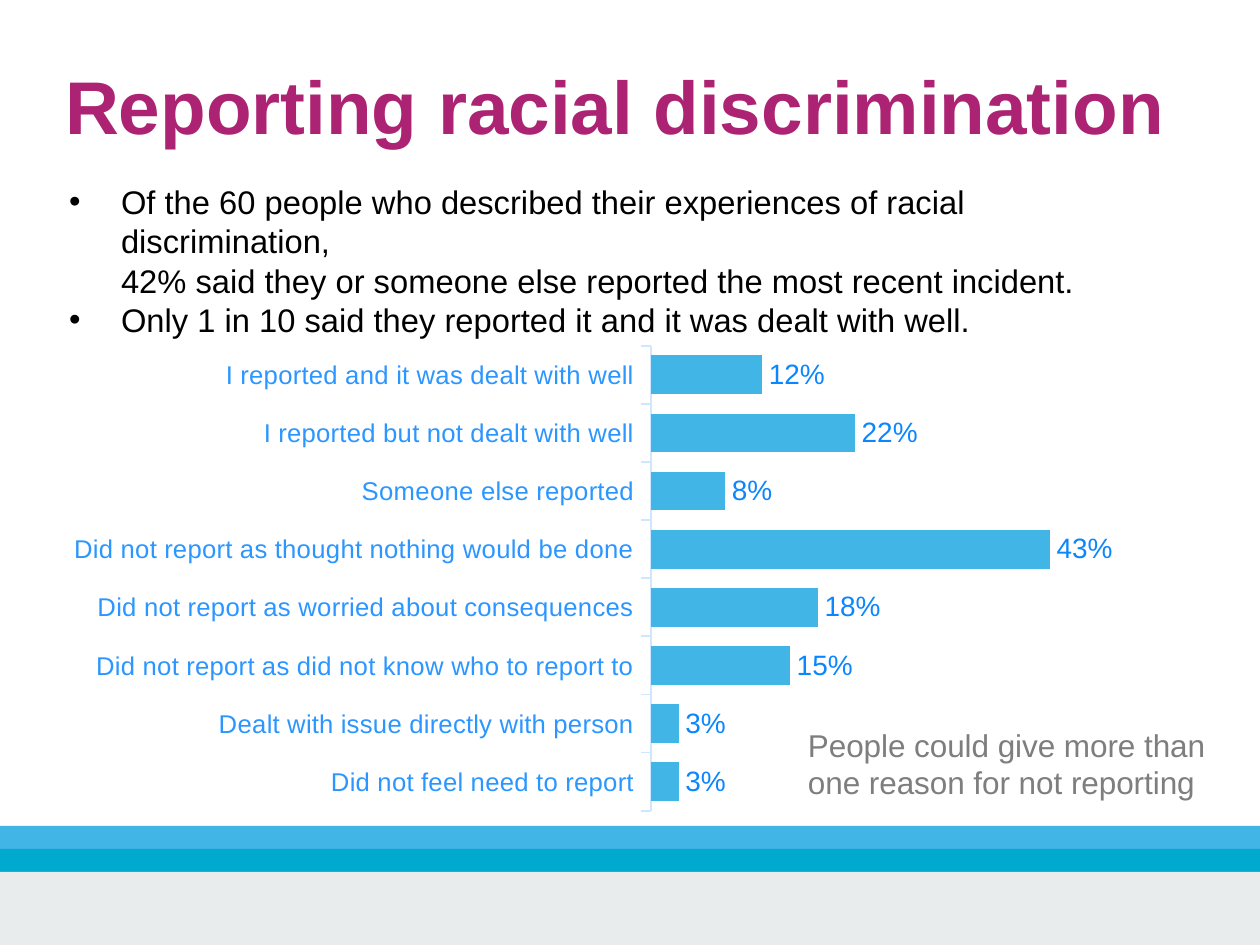
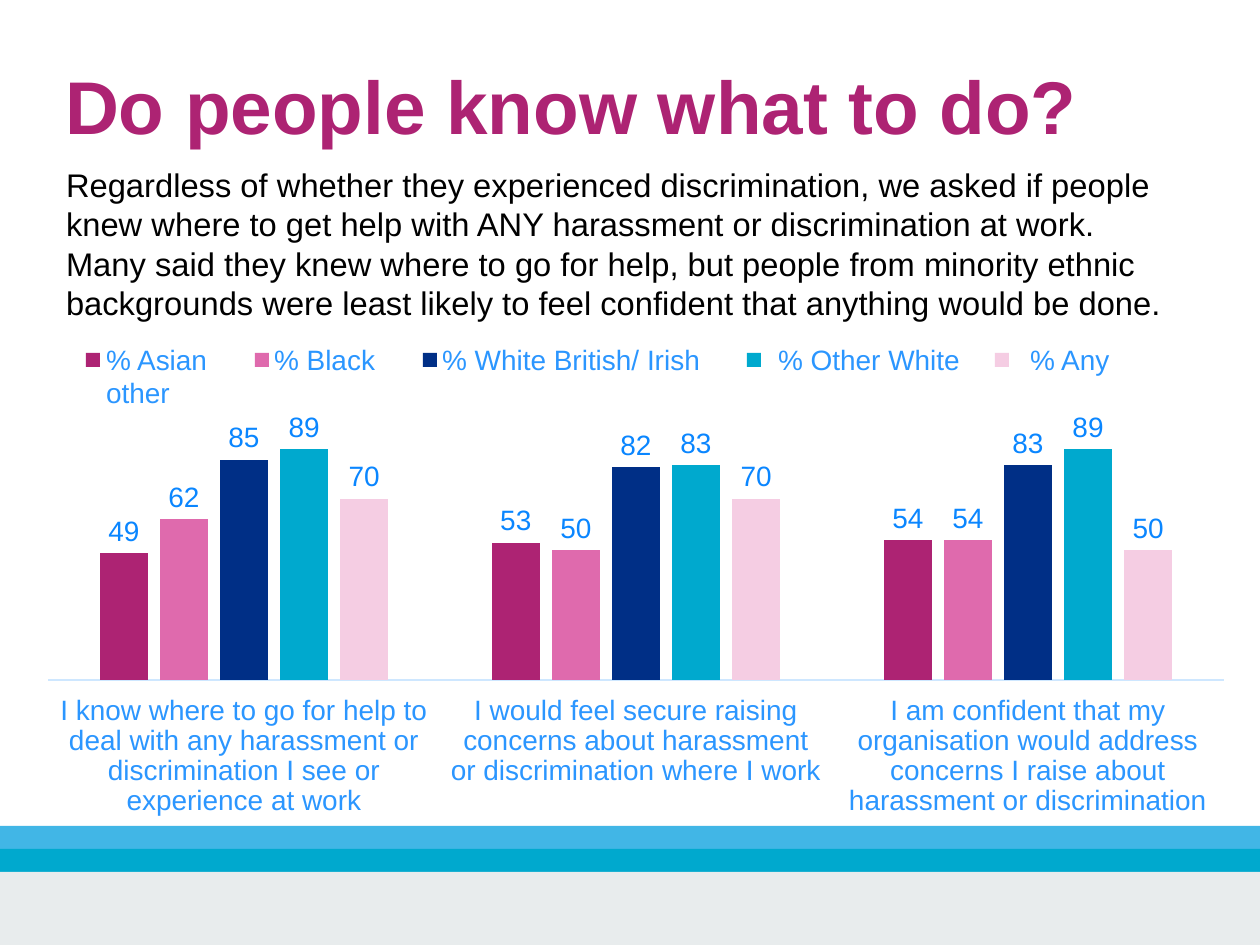
from dataclasses import dataclass

from pptx import Presentation
from pptx.chart.data import CategoryChartData
from pptx.dml.color import RGBColor
from pptx.enum.chart import XL_CHART_TYPE, XL_LABEL_POSITION, XL_TICK_LABEL_POSITION, XL_TICK_MARK
from pptx.enum.shapes import MSO_SHAPE
from pptx.enum.text import MSO_ANCHOR, MSO_AUTO_SIZE, PP_ALIGN
from pptx.oxml import parse_xml
from pptx.oxml.ns import nsdecls, qn
from pptx.util import Emu, Pt


@dataclass(frozen=True)
class Theme:
    font: str = "Arial"
    magenta: str = "AD2373"
    pink: str = "DF6AAD"
    pale_pink: str = "F5CDE3"
    navy: str = "002F86"
    sky: str = "41B6E6"
    teal: str = "00A9CE"
    mist: str = "E8ECED"
    axis: str = "CEE7FF"
    value: str = "0A86FF"
    label: str = "2B96FF"
    note: str = "7E7E7E"
    ink: str = "000000"
    title_size: float = 32
    body_size: float = 14
    note_size: float = 13.5
    label_size: float = 12
    small_size: float = 11


theme = Theme()
SCALE = 914400 / 168


def px(*lengths):
    return [Emu(round(length * SCALE)) for length in lengths]


def style(font, size, color, bold=False):
    font.name = theme.font
    font.size = Pt(size)
    font.bold = bold
    font.color.rgb = RGBColor.from_string(color)


deck = Presentation()
deck.slide_width, deck.slide_height = px(1260, 945)
layout = deck.slide_layouts[1]

titles = ["Reporting racial discrimination", "Do people know what to do?"]
pages = []
for heading in titles:
    page = deck.slides.add_slide(layout)
    pages.append(page)
    title, body = page.placeholders
    title.left, title.top, title.width, title.height = px(65, 60, 1150, 94)
    for holder in (title, body):
        frame = holder.text_frame
        frame.margin_left = frame.margin_top = frame.margin_right = frame.margin_bottom = 0
        frame.vertical_anchor = MSO_ANCHOR.TOP
        frame.auto_size = MSO_AUTO_SIZE.NONE
        frame.word_wrap = True
    para = title.text_frame.paragraphs[0]
    para.alignment = PP_ALIGN.LEFT
    para.line_spacing = Pt(38.2)
    span = para.add_run()
    span.text = heading
    style(span.font, theme.title_size, theme.magenta, True)

reporting, knowing = pages

blocks = [(reporting, 826, 0, 1260, 23, theme.sky),
          (reporting, 849, 0, 1260, 23, theme.teal),
          (reporting, 872, 0, 1260, 73, theme.mist)]
groups = [
    ("Asian", theme.magenta, 86, (49, 53, 54)),
    ("Black", theme.pink, 255, (62, 50, 54)),
    ("White British/ Irish", theme.navy, 423, (85, 82, 83)),
    ("Other White", theme.teal, 747, (89, 83, 89)),
    ("Any other", theme.pale_pink, 995, (70, 70, 50)),
]
blocks += [(knowing, 353, left, 14, 14, color) for _, color, left, _ in groups]
for page, top, left, width, height, color in blocks:
    box = page.shapes.add_shape(MSO_SHAPE.RECTANGLE, *px(left, top, width, height))
    box.shadow.inherit = False
    box.fill.solid()
    box.fill.fore_color.rgb = RGBColor.from_string(color)
    box.line.fill.background()
    if page is reporting:
        layout.shapes.element.append(box.element)

body = reporting.placeholders[1]
body.left, body.top, body.width, body.height = px(66, 182, 1112, 160)
bullets = [
    ["Of the 60 people who described their experiences of racial discrimination,",
     "42% said they or someone else reported the most recent incident."],
    ["Only 1 in 10 said they reported it and it was dealt with well."],
]
hanging, outdent = px(55, -52)
for number, lines in enumerate(bullets):
    para = body.text_frame.paragraphs[0] if number == 0 else body.text_frame.add_paragraph()
    para.line_spacing = Pt(16.8)
    para.space_before = Pt(0)
    for position, line in enumerate(lines):
        if position:
            para.add_line_break()
        span = para.add_run()
        span.text = line
        style(span.font, theme.body_size, theme.ink)
    settings = para._p.get_or_add_pPr()
    settings.set("marL", str(hanging))
    settings.set("indent", str(outdent))
    settings.append(parse_xml(f'<a:buChar {nsdecls("a")} char="•"/>'))

body = knowing.placeholders[1]
body.left, body.top, body.width, body.height = px(66, 165, 1112, 245)
intro = body.text_frame.paragraphs[0]
legend = body.text_frame.add_paragraph()
introduction = (
    "Regardless of whether they experienced discrimination, we asked if people knew where to get help "
    "with ANY harassment or discrimination at work. Many said they knew where to go for help, but people "
    "from minority ethnic backgrounds were least likely to feel confident that anything would be done."
)
names = [f"% {name}" for name, *_ in groups]
texts = [
    (intro, [introduction], theme.body_size, theme.ink, 16.8, 0, 0),
    (legend, names[:1] + ["\t" + name for name in names[1:]], theme.label_size, theme.label, 14.4, 8.7, 40),
]
for para, spans, size, color, pitch, before, inset in texts:
    para.line_spacing = Pt(pitch)
    para.space_before = Pt(before)
    for text in spans:
        span = para.add_run()
        span.text = text
        style(span.font, size, color)
    settings = para._p.get_or_add_pPr()
    settings.set("marL", str(px(inset)[0]))
    settings.set("indent", "0")
    settings.append(parse_xml(f'<a:buNone {nsdecls("a")}/>'))
stops = "".join(f'<a:tab pos="{stop}" algn="l"/>' for stop in px(210, 376, 702, 949))
legend._p.get_or_add_pPr().append(parse_xml(f'<a:tabLst {nsdecls("a")}>{stops}</a:tabLst>'))

answers = [
    ("I reported and it was dealt with well", 0.12),
    ("I reported but not dealt with well", 0.22),
    ("Someone else reported", 0.08),
    ("Did not report as thought nothing would be done", 0.43),
    ("Did not report as worried about consequences", 0.18),
    ("Did not report as did not know who to report to", 0.15),
    ("Dealt with issue directly with person", 0.03),
    ("Did not feel need to report", 0.03),
]
answer_data = CategoryChartData(number_format="0%")
answer_data.categories = [answer for answer, _ in answers]
answer_data.add_series("Reporting", [share for _, share in answers])

group_data = CategoryChartData(number_format="0")
group_data.categories = [
    "I know where to go for help to deal with any harassment or discrimination I see or experience at work",
    "I would feel secure raising concerns about harassment or discrimination where I work",
    "I am confident that my organisation would address concerns I raise about harassment or discrimination",
]
for name, _, _, values in groups:
    group_data.add_series(f"% {name}", values)

charts = [
    (reporting, XL_CHART_TYPE.BAR_CLUSTERED, answer_data, [theme.sky], (10, 340, 1210, 482),
     (651, 346, 464, 465), 0.5, 50, 0, theme.small_size, XL_TICK_MARK.OUTSIDE, "0%"),
    (knowing, XL_CHART_TYPE.COLUMN_CLUSTERED, group_data, [color for _, color, _, _ in groups],
     (30, 410, 1212, 416), (48, 421, 1176, 259), 100, 218, -26, theme.label_size, XL_TICK_MARK.NONE, "0"),
]
for page, kind, data, colors, area, inner, maximum, gap, overlap, size, ticks, pattern in charts:
    chart = page.shapes.add_chart(kind, *px(*area), data).chart
    chart.has_title = False
    chart.has_legend = False
    style(chart.font, size, theme.label)

    plot = chart.plots[0]
    plot.vary_by_categories = False
    plot.gap_width = gap
    plot.overlap = overlap
    plot.has_data_labels = True
    labels = plot.data_labels
    labels.show_value = True
    labels.position = XL_LABEL_POSITION.OUTSIDE_END
    labels.number_format = pattern
    labels.number_format_is_linked = False
    style(labels.font, theme.label_size, theme.value)
    for series, color in zip(plot.series, colors):
        series.format.fill.solid()
        series.format.fill.fore_color.rgb = RGBColor.from_string(color)

    scale_axis = chart.value_axis
    scale_axis.minimum_scale = 0
    scale_axis.maximum_scale = maximum
    scale_axis.has_major_gridlines = False
    scale_axis.visible = False

    category_axis = chart.category_axis
    category_axis.reverse_order = page is reporting
    category_axis.major_tick_mark = ticks
    category_axis.minor_tick_mark = XL_TICK_MARK.NONE
    category_axis.tick_label_position = XL_TICK_LABEL_POSITION.LOW
    category_axis.format.line.color.rgb = RGBColor.from_string(theme.axis)
    category_axis.format.line.width = Pt(0.75)
    style(category_axis.tick_labels.font, size, theme.label)

    left, top, width, height = area
    fractions = {
        "x": (inner[0] - left) / width,
        "y": (inner[1] - top) / height,
        "w": inner[2] / width,
        "h": inner[3] / height,
    }
    modes = '<c:layoutTarget val="inner"/><c:xMode val="edge"/><c:yMode val="edge"/>'
    sizes = "".join(f'<c:{key} val="{value:.4f}"/>' for key, value in fractions.items())
    plot_area = chart.element.find(".//" + qn("c:plotArea"))
    for old in plot_area.findall(qn("c:layout")):
        plot_area.remove(old)
    plot_area.insert(0, parse_xml(
        f'<c:layout {nsdecls("c")}><c:manualLayout>{modes}{sizes}</c:manualLayout></c:layout>'))

note = reporting.shapes.add_textbox(*px(808, 727, 412, 80))
frame = note.text_frame
frame.word_wrap = True
frame.margin_left = frame.margin_top = frame.margin_right = frame.margin_bottom = 0
para = frame.paragraphs[0]
para.line_spacing = Pt(15.9)
span = para.add_run()
span.text = "People could give more than one reason for not reporting"
style(span.font, theme.note_size, theme.note)

deck.save("out.pptx")
